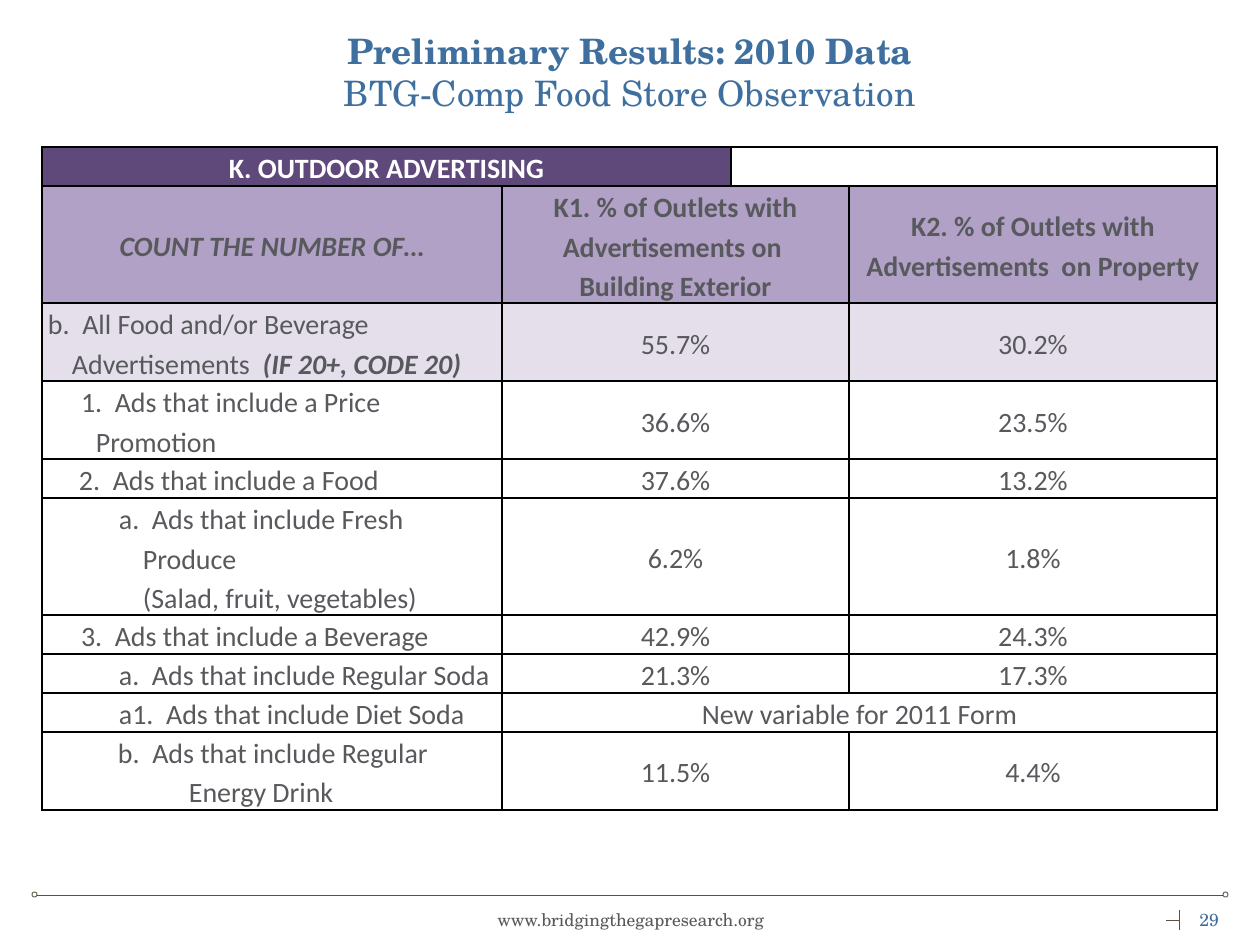
"""Build the outdoor advertising results slide."""
from lxml import etree
from pptx import Presentation
from pptx.dml.color import RGBColor
from pptx.enum.shapes import MSO_CONNECTOR, MSO_SHAPE
from pptx.enum.text import MSO_ANCHOR, MSO_AUTO_SIZE, PP_ALIGN
from pptx.oxml.ns import qn
from pptx.util import Pt

CENTER, LEFT = PP_ALIGN.CENTER, PP_ALIGN.LEFT
MIDDLE, BOTTOM = MSO_ANCHOR.MIDDLE, MSO_ANCHOR.BOTTOM
OVAL, STRAIGHT = MSO_SHAPE.OVAL, MSO_CONNECTOR.STRAIGHT
SCALE = 914400 / 126
SERIF, SANS = "TeX Gyre Schola", "Calibri"
COLORS = {"title": "3F6F9E", "text": "58595C", "rule": "5B4F3E", "border": "000000",
          "white": "FFFFFF", "dark": "5F497A", "medium": "B2A1C7", "light": "E5DFEC"}

TITLE = [("Preliminary Results: 2010 Data", True), ("BTG-Comp Food Store Observation", False)]
FOOTERS = [("www.bridgingthegapresearch.org", (431, 895, 399, 50), CENTER, "text"),
           ("29", (1187, 895, 63, 50), LEFT, "title")]
RULES = [(37, 895, 1223, 895), (1179, 910, 1179, 930), (1166, 920, 1179, 920)]
RULE_ENDS = [32, 1223]

TABLE_LEFT, TABLE_TOP, LINE_HEIGHT = 42, 147, 39
COLUMN_WIDTHS = [460, 229, 118, 368]
HEADINGS = [
    ["COUNT THE NUMBER OF…"],
    ["K1. % of Outlets with Advertisements on ", "Building Exterior"],
    ["K2. % of Outlets with Advertisements  on Property"],
]
NEW_VARIABLE = "New variable for 2011 Form"
MEASURES = [
    (["b.  All Food and/or Beverage Advertisements  "], (24, -24), "55.7%", "30.2%"),
    (["1.  Ads that include a Price Promotion"], (48, -15), "36.6%", "23.5%"),
    (["2.  Ads that include a Food"], (63, -32), "37.6%", "13.2%"),
    (["a.  Ads that include Fresh Produce", "(Salad, fruit, vegetables)"], (95, -24),
     "6.2%", "1.8%"),
    (["3.  Ads that include a Beverage"], (48, -15), "42.9%", "24.3%"),
    (["a.  Ads that include Regular Soda"], (134, -63), "21.3%", "17.3%"),
    (["a1.  Ads that include Diet Soda"], (71, 0), NEW_VARIABLE, None),
    (["b.  Ads that include Regular Energy Drink"], (141, -71), "11.5%", "4.4%"),
]
ROW_LINES = [1, 3, 2, 2, 1, 3, 1, 1, 1, 2]
ROW_RULES = [1, 1.5, 1.5, 1.5, 1.5, 1, 1.5, 1, 1, 1, 1]
ROW_FILLS = ["white", "medium", "light"] + ["white"] * 7


def px(length):
    return round(length * SCALE)


def box(*lengths):
    return [px(length) for length in lengths]


def rgb(name):
    return RGBColor.from_string(COLORS[name])


def add_run(paragraph, text, font, size, color, bold=False, italic=False):
    run = paragraph.add_run()
    run.text = text
    run.font.name, run.font.size = font, Pt(size)
    run.font.bold, run.font.italic = bold, italic
    run.font.color.rgb = rgb(color)


def add_title(slide):
    title = slide.shapes.title
    title.left, title.top, title.width, title.height = box(42, 21, 1176, 93)
    frame = title.text_frame
    frame.auto_size, frame.word_wrap = MSO_AUTO_SIZE.NONE, True
    frame.vertical_anchor = BOTTOM
    frame.margin_left = frame.margin_right = frame.margin_top = frame.margin_bottom = 0
    paragraph = frame.paragraphs[0]
    paragraph.alignment = CENTER
    for index, (text, bold) in enumerate(TITLE):
        if index:
            paragraph.add_line_break()
        add_run(paragraph, text, SERIF, 20, "title", bold)


def add_footer(slide):
    for left in RULE_ENDS:
        circle = slide.shapes.add_shape(OVAL, *box(left, 892, 5, 5))
        circle.shadow.inherit = False
        circle.fill.background()
        circle.line.color.rgb, circle.line.width = rgb("rule"), Pt(0.5)
    for ends in RULES:
        rule = slide.shapes.add_connector(STRAIGHT, *box(*ends))
        rule.line.color.rgb, rule.line.width = rgb("rule"), Pt(0.5)
        etree.SubElement(rule._element.spPr, qn("a:effectLst"))
    for text, place, alignment, color in FOOTERS:
        frame = slide.shapes.add_textbox(*box(*place)).text_frame
        frame.word_wrap, frame.vertical_anchor = True, MIDDLE
        frame.paragraphs[0].alignment = alignment
        add_run(frame.paragraphs[0], text, SERIF, 10, color)


def set_borders(cell, top, bottom):
    properties = cell._tc.get_or_add_tcPr()
    widths = {"a:lnL": 1, "a:lnR": 1, "a:lnT": top, "a:lnB": bottom}
    for index, (tag, width) in enumerate(widths.items()):
        line = etree.Element(qn(tag), w=str(Pt(width)))
        fill = etree.SubElement(line, qn("a:solidFill"))
        etree.SubElement(fill, qn("a:srgbClr"), val=COLORS["border"])
        properties.insert(index, line)


def write_cell(cell, lines, color="text", bold=False, italic=False, indent=None):
    for index, text in enumerate(lines):
        frame = cell.text_frame
        paragraph = frame.add_paragraph() if index else frame.paragraphs[0]
        paragraph.alignment = LEFT if indent else CENTER
        paragraph.line_spacing = 1.15
        if indent:
            properties = paragraph._p.get_or_add_pPr()
            properties.set("marL", str(px(indent[0])))
            properties.set("indent", str(0 if index else px(indent[1])))
        add_run(paragraph, text, SANS, 16, color, bold, italic)


def add_results(slide):
    table = slide.shapes.add_table(
        len(ROW_LINES), len(COLUMN_WIDTHS),
        *box(TABLE_LEFT, TABLE_TOP, sum(COLUMN_WIDTHS), sum(ROW_LINES) * LINE_HEIGHT)).table
    table.first_row = table.horz_banding = False
    for column, width in zip(table.columns, COLUMN_WIDTHS):
        column.width = px(width)
    for index, lines in enumerate(ROW_LINES):
        table.rows[index].height = px(lines * LINE_HEIGHT)
        for cell in table.rows[index].cells:
            cell.margin_left = cell.margin_right = px(6)
            cell.margin_top = cell.margin_bottom = 0
            cell.vertical_anchor = MIDDLE
            cell.fill.solid()
            cell.fill.fore_color.rgb = rgb(ROW_FILLS[index])
            set_borders(cell, ROW_RULES[index], ROW_RULES[index + 1])

    banner = table.cell(0, 0)
    banner.merge(table.cell(0, 1))
    banner.fill.fore_color.rgb = rgb("dark")
    write_cell(banner, ["K. OUTDOOR ADVERTISING"], "white", bold=True)
    table.cell(0, 2).merge(table.cell(0, 3))
    table.cell(0, 2).text_frame.paragraphs[0].font.size = Pt(16)

    table.cell(1, 1).merge(table.cell(1, 2))
    for column, lines in zip((0, 1, 3), HEADINGS):
        write_cell(table.cell(1, column), lines, bold=True, italic=column == 0)
    for row, (label, indent, exterior, grounds) in enumerate(MEASURES, 2):
        write_cell(table.cell(row, 0), label, indent=indent)
        table.cell(row, 1).merge(table.cell(row, 2 if grounds else 3))
        write_cell(table.cell(row, 1), [exterior])
        if grounds:
            write_cell(table.cell(row, 3), [grounds])
    add_run(table.cell(2, 0).text_frame.paragraphs[0], "(IF 20+, CODE 20)",
            SANS, 16, "text", True, True)


def main():
    presentation = Presentation()
    presentation.slide_width, presentation.slide_height = box(1260, 945)
    slide = presentation.slides.add_slide(presentation.slide_layouts[5])
    add_footer(slide)
    add_title(slide)
    add_results(slide)
    presentation.save("out.pptx")


if __name__ == "__main__":
    main()
